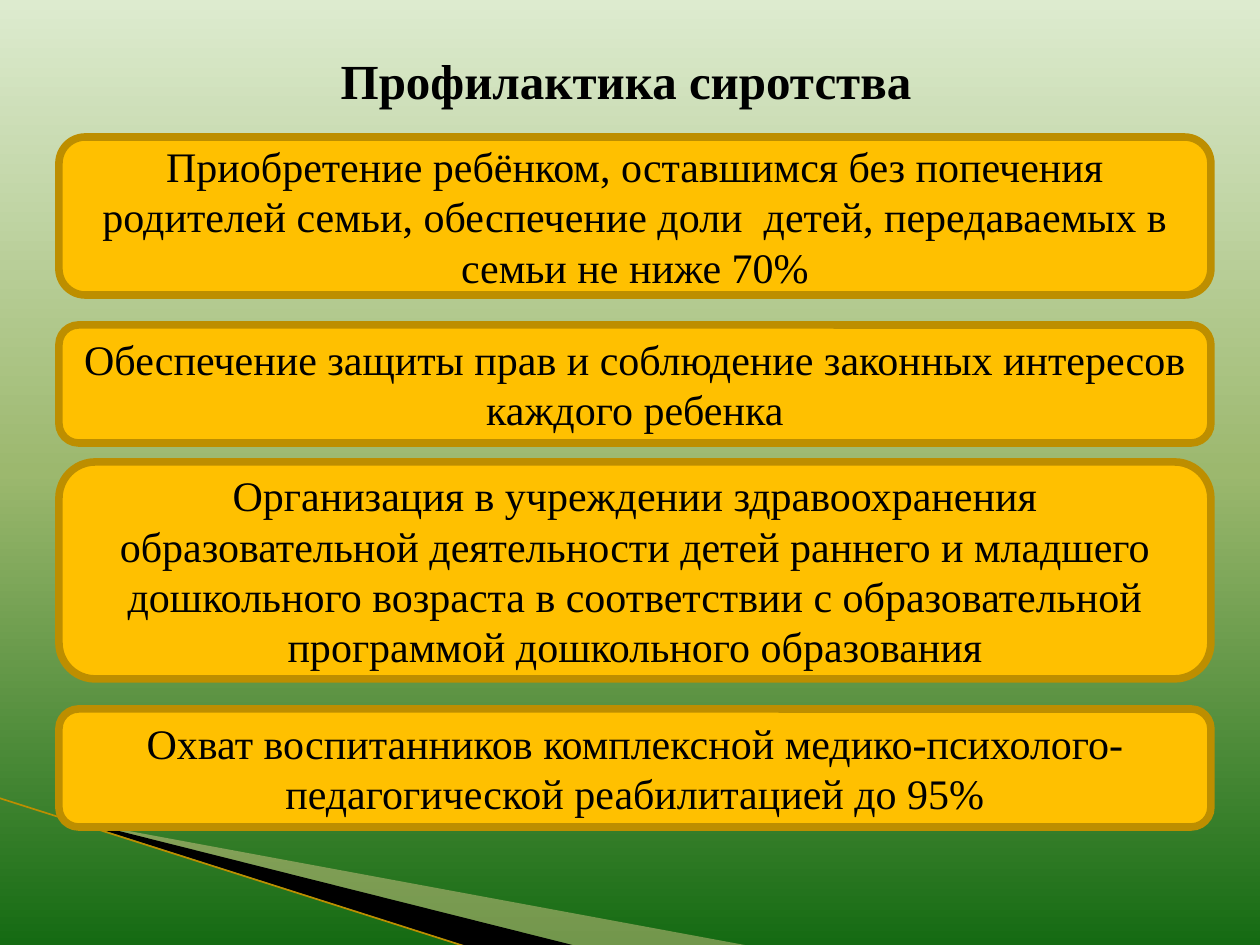
from copy import deepcopy
from dataclasses import dataclass

from lxml import etree
from pptx import Presentation
from pptx.dml.color import RGBColor
from pptx.enum.shapes import MSO_CONNECTOR, MSO_SHAPE
from pptx.enum.text import MSO_ANCHOR, PP_ALIGN
from pptx.oxml.ns import qn
from pptx.util import Pt

PX = 914400 // 126
ROUND = MSO_SHAPE.ROUNDED_RECTANGLE
STRAIGHT = MSO_CONNECTOR.STRAIGHT
MIDDLE = MSO_ANCHOR.MIDDLE
CENTER = PP_ALIGN.CENTER

FONT = "Times New Roman"
BLACK, GOLD, EDGE, CREAM = "000000", "FFC000", "BD8E00", "FFD9A2"
SKY = [(0, "DDEBCF"), (0.5, "9CB86E"), (1, "156B13")]
LEFT, WIDE = 59, 1152


@dataclass
class Goal:
    top: int
    high: int
    text: str


@dataclass
class Wedge:
    points: list[tuple[int, int]]
    fill: str
    alpha: int = 100


GOALS = [
    Goal(137, 158, "Приобретение ребёнком, оставшимся без попечения родителей семьи, "
                   "обеспечение доли  детей, передаваемых в семьи не ниже 70%"),
    Goal(325, 118, "Обеспечение защиты прав и соблюдение законных интересов каждого ребенка"),
    Goal(462, 217, "Организация в учреждении здравоохранения образовательной деятельности "
                   "детей раннего и младшего дошкольного возраста в соответствии "
                   "с образовательной программой дошкольного образования"),
    Goal(709, 118, "Охват воспитанников комплексной медико-психолого-педагогической "
                   "реабилитацией до 95%"),
]
WEDGES = [
    Wedge([(69, 820), (750, 946), (575, 946), (69, 819)], CREAM, 40),
    Wedge([(67, 818), (576, 946), (469, 947), (68, 819)], BLACK),
]


def color(code: str) -> RGBColor:
    return RGBColor.from_string(code)


def px(*sizes: int) -> list[int]:
    return [size * PX for size in sizes]


def write(shape, text: str, size: int, bold: bool = False) -> None:
    frame = shape.text_frame
    frame.word_wrap = True
    frame.vertical_anchor = MIDDLE
    para = frame.paragraphs[0]
    para.alignment = CENTER
    run = para.add_run()
    run.text = text
    run.font.name = FONT
    run.font.size = Pt(size)
    run.font.bold = bold
    run.font.color.rgb = color(BLACK)


def paint_sky(slide) -> None:
    fill = slide.background.fill
    fill.gradient()
    fill.gradient_angle = 270
    stops = slide.element.find(".//" + qn("a:gsLst"))
    stops.insert(1, deepcopy(stops[0]))
    for stop, (place, code) in zip(fill.gradient_stops, SKY):
        stop.position = place
        stop.color.rgb = color(code)


def draw_wedge(slide, wedge: Wedge) -> None:
    start, *rest = wedge.points
    path = slide.shapes.build_freeform(*start, scale=PX)
    path.add_line_segments(rest, close=True)
    shape = path.convert_to_shape()
    shape.shadow.inherit = False
    shape.fill.solid()
    shape.fill.fore_color.rgb = color(wedge.fill)
    shape.line.fill.background()
    if wedge.alpha < 100:
        tint = shape.fill._xPr.find(".//" + qn("a:srgbClr"))
        etree.SubElement(tint, qn("a:alpha"), val=str(wedge.alpha * 1000))


def draw_ray(slide) -> None:
    ray = slide.shapes.add_connector(STRAIGHT, *px(-1, 798, 467, 947))
    ray.line.color.rgb = color(EDGE)
    ray.line.width = Pt(0.95)
    etree.SubElement(ray.element.spPr, qn("a:effectLst"))


def draw_goal(slide, goal: Goal) -> None:
    box = slide.shapes.add_shape(ROUND, *px(LEFT, goal.top, WIDE, goal.high))
    box.shadow.inherit = False
    box.fill.solid()
    box.fill.fore_color.rgb = color(GOLD)
    box.line.color.rgb = color(EDGE)
    box.line.width = Pt(4.33)
    write(box, goal.text, 24)


def main() -> None:
    deck = Presentation()
    deck.slide_width, deck.slide_height = px(1260, 945)
    slide = deck.slides.add_slide(deck.slide_layouts[5])

    # Backdrop
    paint_sky(slide)
    for wedge in WEDGES:
        draw_wedge(slide, wedge)
    draw_ray(slide)

    # Title
    title = slide.shapes.title
    title.left, title.top, title.width, title.height = px(LEFT, 39, 1134, 81)
    write(title, "Профилактика сиротства", 28, bold=True)

    # Goals
    for goal in GOALS:
        draw_goal(slide, goal)

    deck.save("out.pptx")


if __name__ == "__main__":
    main()
